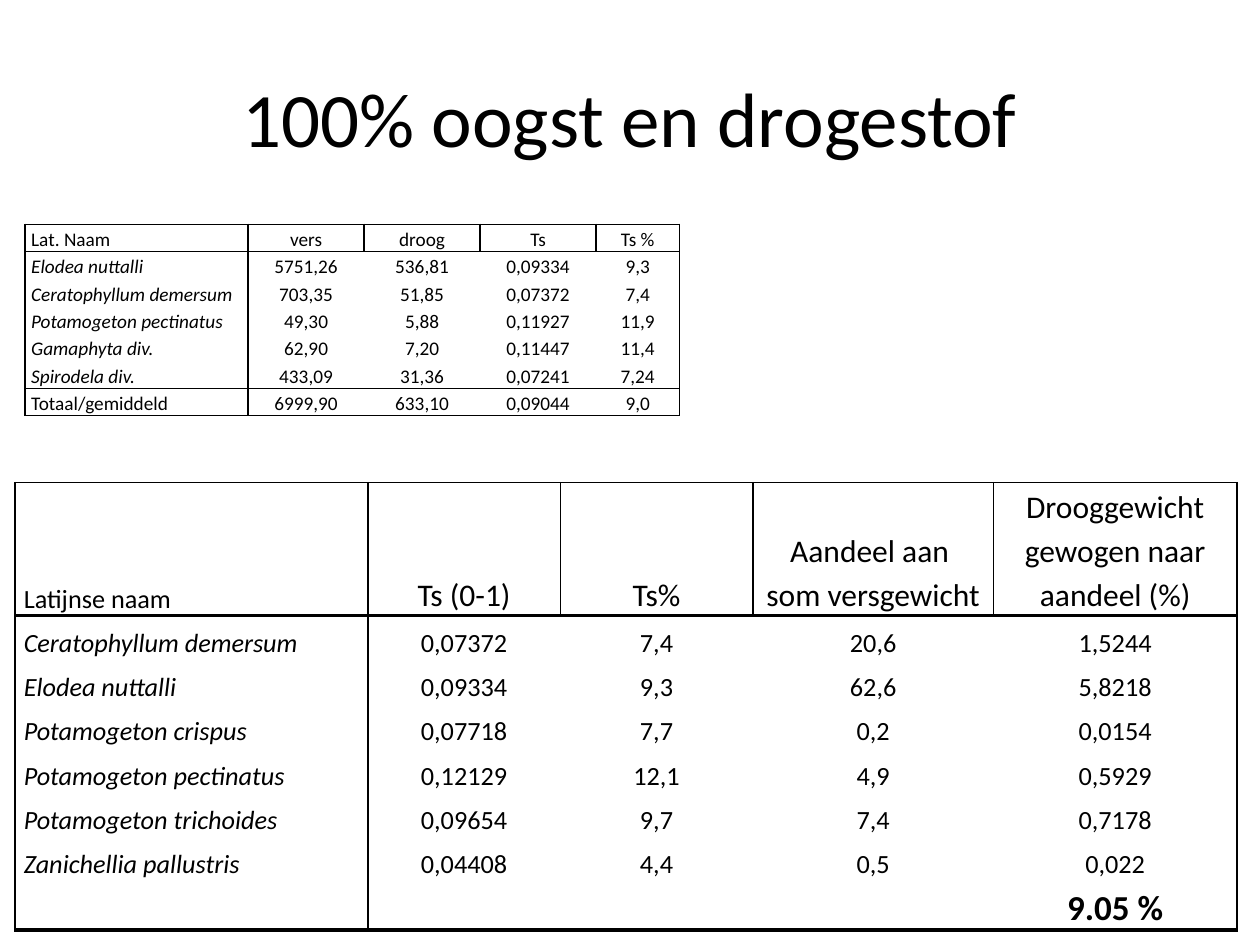
from lxml import etree
from pptx import Presentation
from pptx.dml.color import RGBColor
from pptx.enum import text
from pptx.oxml.ns import qn
from pptx.util import Pt

BLACK = RGBColor(0, 0, 0)
WHITE = RGBColor(255, 255, 255)
FONT = "Calibri"

HARVEST = [
    ["Lat. Naam", "vers", "droog", "Ts", "Ts %"],
    ["Elodea nuttalli", "5751,26", "536,81", "0,09334", "9,3"],
    ["Ceratophyllum demersum", "703,35", "51,85", "0,07372", "7,4"],
    ["Potamogeton pectinatus", "49,30", "5,88", "0,11927", "11,9"],
    ["Gamaphyta div.", "62,90", "7,20", "0,11447", "11,4"],
    ["Spirodela div.", "433,09", "31,36", "0,07241", "7,24"],
    ["Totaal/gemiddeld", "6999,90", "633,10", "0,09044", "9,0"],
]
DRY_WEIGHT = [
    ["Latijnse naam", "Ts (0-1)", "Ts%", "Aandeel aan \nsom versgewicht",
     "Drooggewicht\ngewogen naar aandeel (%)"],
    ["Ceratophyllum demersum", "0,07372", "7,4", "20,6", "1,5244"],
    ["Elodea nuttalli", "0,09334", "9,3", "62,6", "5,8218"],
    ["Potamogeton crispus", "0,07718", "7,7", "0,2", "0,0154"],
    ["Potamogeton pectinatus", "0,12129", "12,1", "4,9", "0,5929"],
    ["Potamogeton trichoides", "0,09654", "9,7", "7,4", "0,7178"],
    ["Zanichellia pallustris", "0,04408", "4,4", "0,5", "0,022"],
    ["", "", "", "", "9.05 %"],
]


class SlideBuilder:
    """Holds the current slide and the style of its elements."""

    def __init__(self, slide):
        self.slide = slide

    def style_paragraph(self, paragraph, size, align, italic=False, bold=False):
        paragraph.alignment = align
        for run in paragraph.runs:
            font = run.font
            font.name, font.size = FONT, Pt(size)
            font.italic, font.bold = italic, bold
            font.color.rgb = BLACK

    def title(self, wording, left, top, width, height):
        title = self.slide.shapes.title
        title.left, title.top = Pt(left), Pt(top)
        title.width, title.height = Pt(width), Pt(height)
        title.text_frame.text = wording
        title.text_frame.vertical_anchor = text.MSO_ANCHOR.MIDDLE
        self.style_paragraph(title.text_frame.paragraphs[0], 44, text.PP_ALIGN.CENTER)

    def border(self, cell, side, width):
        """Draw one cell edge; a width of 0 hides it."""
        line = etree.SubElement(cell._tc.get_or_add_tcPr(), qn(f"a:ln{side}"))
        if not width:
            etree.SubElement(line, qn("a:noFill"))
            return
        line.set("w", str(Pt(width)))
        fill = etree.SubElement(line, qn("a:solidFill"))
        etree.SubElement(fill, qn("a:srgbClr"), val=str(BLACK))

    def table(self, rows, left, top, widths, heights, rules, margin, size_of, fill=None):
        """rules maps a row edge to its line width; size_of gives a cell's text size."""
        table = self.slide.shapes.add_table(
            len(rows), len(widths), Pt(left), Pt(top),
            Pt(sum(widths)), Pt(sum(heights))).table
        table.first_row = table.horz_banding = False
        for column, width in zip(table.columns, widths):
            column.width = Pt(width)
        for row, height in zip(table.rows, heights):
            row.height = Pt(height)

        for r, values in enumerate(rows):
            # The body keeps only the outer edges and the one beside the names.
            upright = range(len(widths) + 1) if r == 0 else (0, 1, len(widths))
            for c, value in enumerate(values):
                cell = table.cell(r, c)
                cell.margin_left = cell.margin_right = Pt(margin)
                cell.margin_top = cell.margin_bottom = 0
                cell.vertical_anchor = text.MSO_ANCHOR.BOTTOM
                self.border(cell, "L", int(c in upright))
                self.border(cell, "R", int(c + 1 in upright))
                self.border(cell, "T", rules.get(r, 0))
                self.border(cell, "B", rules.get(r + 1, 0))
                if fill is None:
                    cell.fill.background()
                else:
                    cell.fill.solid()
                    cell.fill.fore_color.rgb = fill
                if not value:
                    continue
                cell.text_frame.text = value
                align = text.PP_ALIGN.CENTER if c else text.PP_ALIGN.LEFT
                for paragraph in cell.text_frame.paragraphs:
                    paragraph.line_spacing = 1.15
                    self.style_paragraph(
                        paragraph, size_of(r, c), align,
                        italic=c == 0 and 0 < r < len(rows) - 1,
                        bold=value == "9.05 %")


def dry_weight_size(row, column):
    if row == len(DRY_WEIGHT) - 1:
        return 20
    return 18 if row == 0 and column else 15


def main():
    prs = Presentation()
    prs.slide_width, prs.slide_height = Pt(720), Pt(540)
    builder = SlideBuilder(prs.slides.add_slide(prs.slide_layouts[5]))
    builder.title("100% oogst en drogestof", 36, 21.6, 648, 90)
    builder.table(DRY_WEIGHT, 8.6, 275.8, [201.6, 110, 110, 137.6, 139],
                  [75] + [25.3] * 7, {0: 1, 1: 2.25, 8: 2.25}, 5, dry_weight_size)
    builder.table(HARVEST, 14.2, 128.2, [127.6, 66.3, 66.3, 66.3, 47.6],
                  [14.3] * 7, {0: 1, 1: 1, 6: 1, 7: 1}, 3.6,
                  lambda row, column: 11, WHITE)
    prs.save("out.pptx")


if __name__ == "__main__":
    main()
